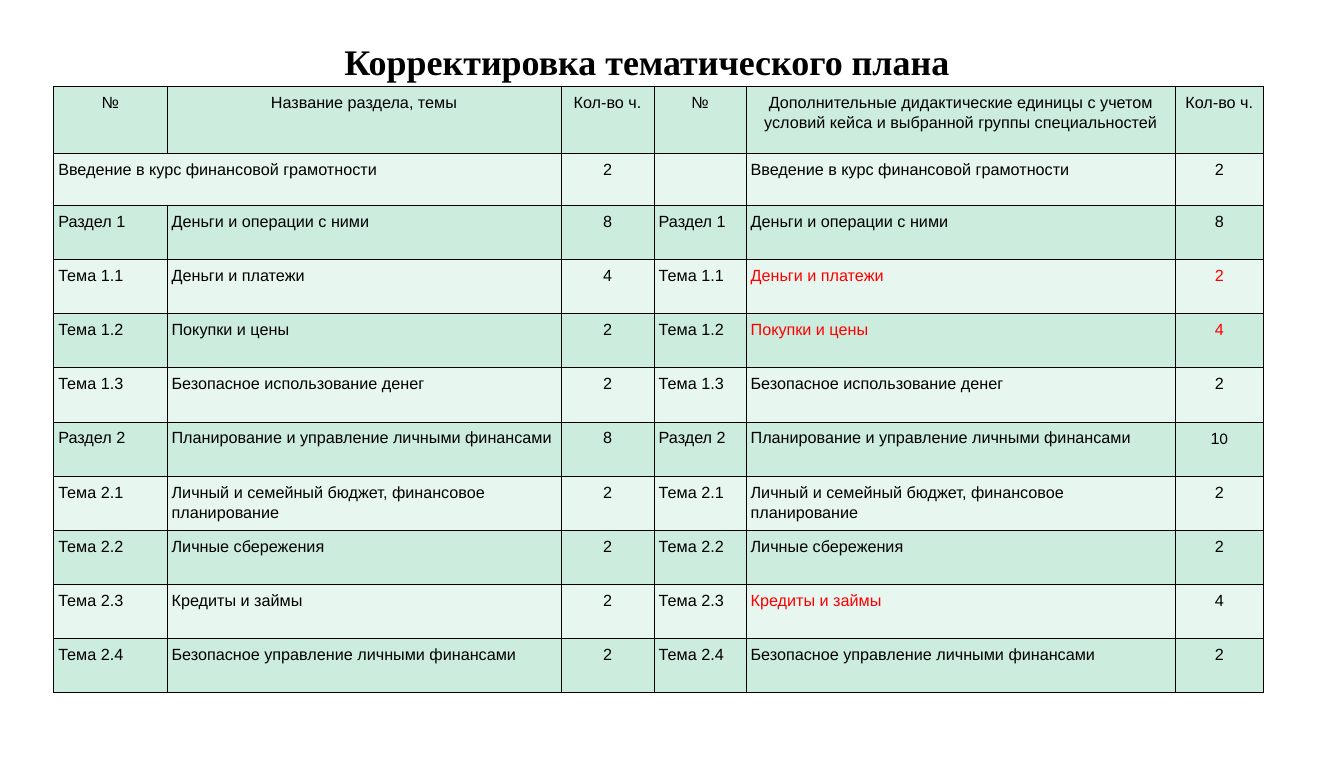
from lxml.etree import SubElement
from pptx import Presentation
from pptx.dml.color import RGBColor
from pptx.enum.text import MSO_AUTO_SIZE as AutoSize, PP_ALIGN as Align
from pptx.oxml.ns import qn
from pptx.util import Inches, Pt

BLACK, RED = "000000", "FF0000"
DARK_BAND, LIGHT_BAND = "CCECDE", "E7F6EF"
COLUMN_WIDTHS = [1.75, 6.08, 1.44, 1.42, 6.63, 1.35]
HOURS_COLUMNS = (2, 5)
HEADER_HEIGHT, INTRO_HEIGHT = 1.04, 0.8

HEADER = ["№", "Название раздела, темы", "Кол-во ч.", "№",
          "Дополнительные дидактические единицы с учетом условий кейса "
          "и выбранной группы специальностей", "Кол-во ч."]
INTRO = "Введение в курс финансовой грамотности"

# Number, topic, planned hours, adjusted hours, columns shown in red
TOPICS = [
    ("Раздел 1", "Деньги и операции с ними", "8", "8", ()),
    ("Тема 1.1", "Деньги и платежи", "4", "2", (4, 5)),
    ("Тема 1.2", "Покупки и цены", "2", "4", (4, 5)),
    ("Тема 1.3", "Безопасное использование денег", "2", "2", ()),
    ("Раздел 2", "Планирование и управление личными финансами", "8",
     [("1", "Arial"), ("0", "Calibri")], ()),
    ("Тема 2.1", "Личный и семейный бюджет, финансовое планирование", "2", "2", ()),
    ("Тема 2.2", "Личные сбережения", "2", "2", ()),
    ("Тема 2.3", "Кредиты и займы", "2", "4", (4,)),
    ("Тема 2.4", "Безопасное управление личными финансами", "2", "2", ()),
]


def color(value):
    return RGBColor.from_string(value)


def add_run(paragraph, text, font, size, tint=BLACK, bold=False):
    run = paragraph.add_run()
    run.text = text
    run.font.name, run.font.size, run.font.bold = font, Pt(size), bold
    run.font.color.rgb = color(tint)


def add_borders(cell):
    properties = cell._tc.get_or_add_tcPr()
    for side in ("lnL", "lnR", "lnT", "lnB"):
        line = SubElement(properties, qn(f"a:{side}"), w=str(Pt(1)))
        fill = SubElement(line, qn("a:solidFill"))
        SubElement(fill, qn("a:srgbClr"), val=BLACK)


def fill_cell(cell, content, band, tint, align):
    cell.margin_left = cell.margin_right = Inches(0.07)
    cell.margin_top = cell.margin_bottom = Inches(0.07)
    add_borders(cell)
    cell.fill.solid()
    cell.fill.fore_color.rgb = color(band)
    paragraph = cell.text_frame.paragraphs[0]
    paragraph.alignment, paragraph.line_spacing = align, 1.15
    runs = [(content, "Arial")] if isinstance(content, str) else content
    for text, font in runs:
        if text:
            add_run(paragraph, text, font, 18, tint)


def add_title(slide, left, top, width, height):
    title = slide.shapes.add_textbox(*map(Inches, (left, top, width, height)))
    frame = title.text_frame
    frame.word_wrap = False
    frame.auto_size = AutoSize.SHAPE_TO_FIT_TEXT
    add_run(frame.paragraphs[0], "Корректировка тематического плана",
            "Times New Roman", 40, bold=True)


def add_plan(slide, left, top, width, height):
    rows = [(HEADER, ()), ([INTRO, "", "2", "", INTRO, "2"], ())]
    rows += [([number, topic, planned, number, topic, adjusted], red)
             for number, topic, planned, adjusted, red in TOPICS]
    plan = slide.shapes.add_table(len(rows), len(HEADER),
                                  *map(Inches, (left, top, width, height))).table
    plan.first_row = plan.horz_banding = False

    # Column and row sizes: topic rows share the remaining height
    for column, column_width in zip(plan.columns, COLUMN_WIDTHS):
        column.width = Inches(column_width)
    topic_height = (height - HEADER_HEIGHT - INTRO_HEIGHT) / len(TOPICS)
    heights = [HEADER_HEIGHT, INTRO_HEIGHT] + [topic_height] * len(TOPICS)
    for row, row_height in zip(plan.rows, heights):
        row.height = Inches(row_height)

    # Cells in alternating bands
    for r, (contents, red) in enumerate(rows):
        band = LIGHT_BAND if r % 2 else DARK_BAND
        for c, content in enumerate(contents):
            centered = r == 0 or c in HOURS_COLUMNS
            fill_cell(plan.cell(r, c), content, band, RED if c in red else BLACK,
                      Align.CENTER if centered else Align.LEFT)
    plan.cell(1, 0).merge(plan.cell(1, 1))


def main():
    deck = Presentation()
    deck.slide_width, deck.slide_height = Inches(20.75), Inches(11.69)
    slide = deck.slides.add_slide(deck.slide_layouts[6])
    add_title(slide, 5.22, 0.56, 9.72, 0.77)
    add_plan(slide, 0.83, 1.33, 18.67, 9.37)
    deck.save("out.pptx")


if __name__ == "__main__":
    main()
